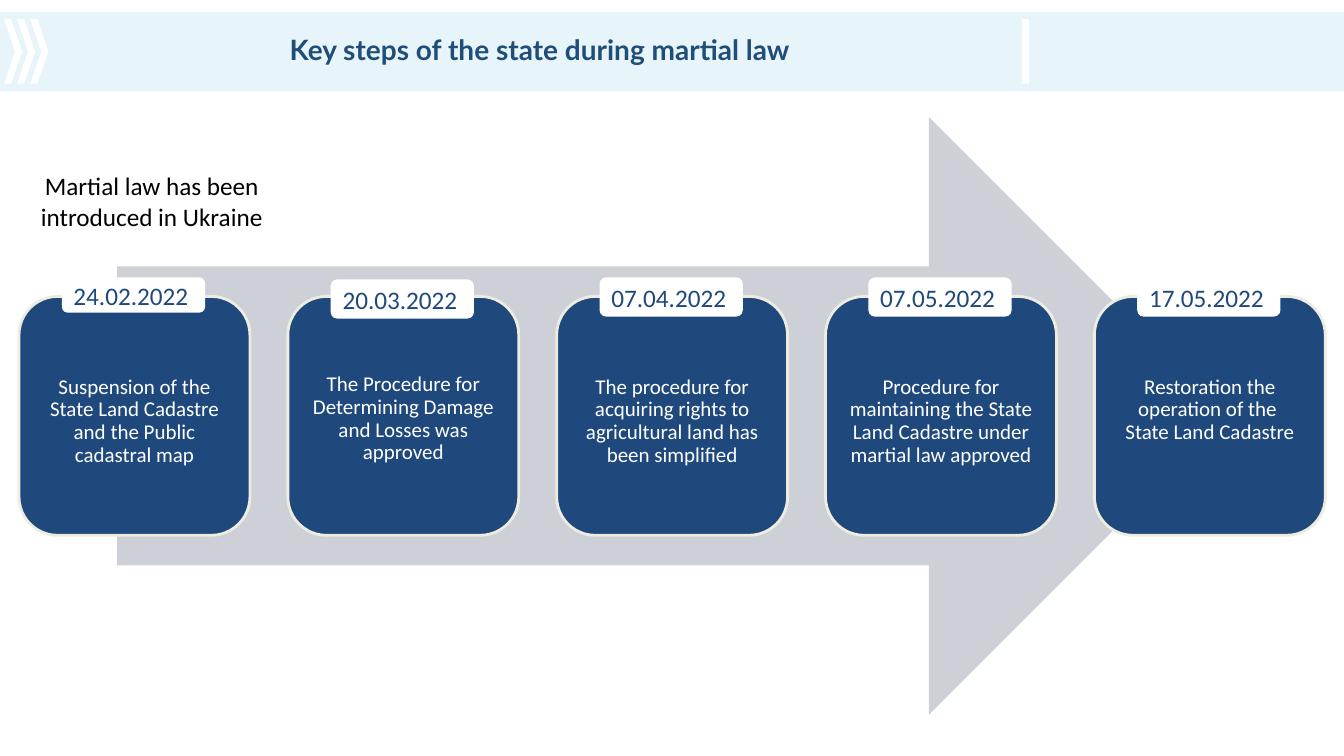
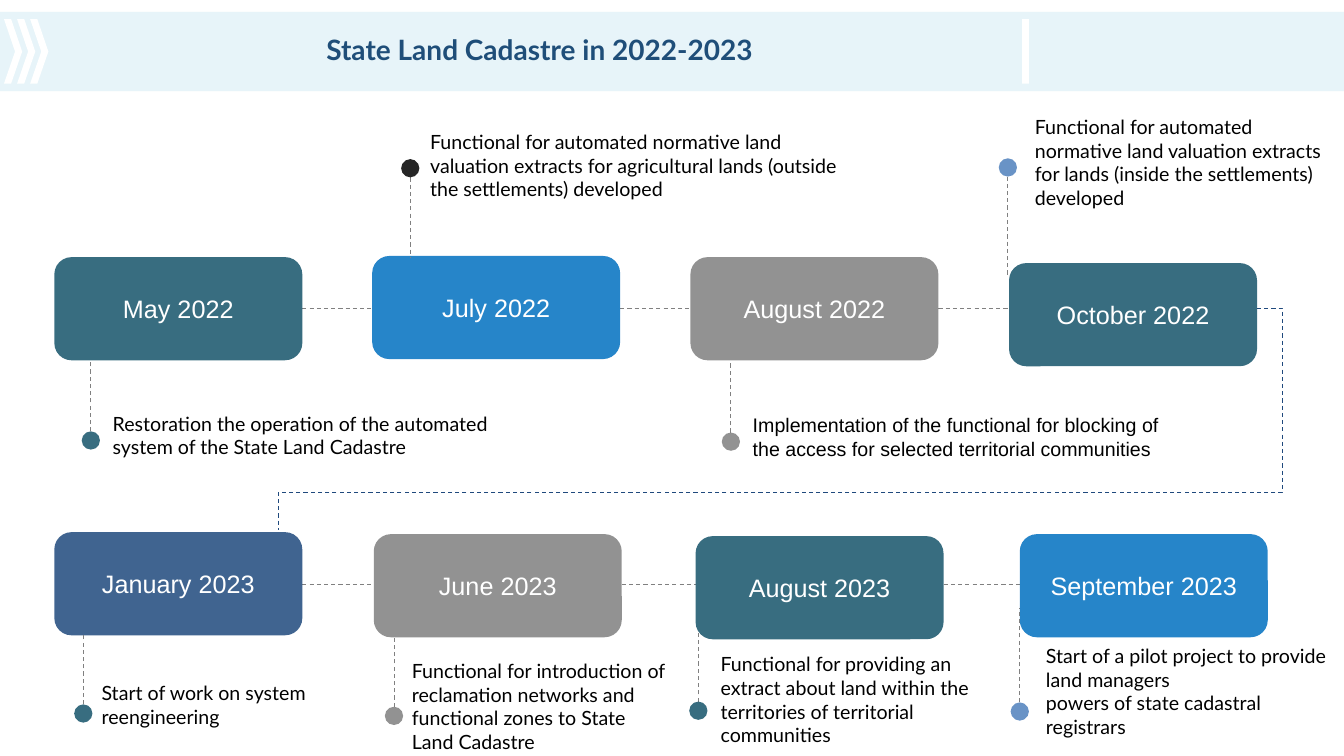
from lxml import etree
from pptx import Presentation
from pptx.dml.color import RGBColor
from pptx.enum import dml, shapes, text
from pptx.oxml.ns import qn
from pptx.util import Cm, Pt

HUES = {
    "band": "DCEFF7", "title": "1F4E79", "navy": "1F497D", "cream": "EEECE1",
    "arrow": "CDD0D7", "teal": "16546A", "blue": "0070C0", "gray": "808080",
    "sky": "4F81BD", "black": "000000", "white": "FFFFFF",
}
KIND = shapes.MSO_SHAPE
MID, TOP = text.MSO_ANCHOR.MIDDLE, text.MSO_ANCHOR.TOP
LEFT, CENTER = text.PP_ALIGN.LEFT, text.PP_ALIGN.CENTER

STEPS_TITLE = "Key steps of the state during martial law"
INTRO = "Martial law has been introduced in Ukraine"
STEPS = [
    ("24.02.2022", 6.99, 0.89, 1.72,
     "Suspension of the State Land Cadastre and the Public cadastral map"),
    ("20.03.2022", 7.04, 0.99, 1.66,
     "The Procedure for Determining Damage and Losses was approved"),
    ("07.04.2022", 6.99, 0.99, 1.72,
     "The procedure for acquiring rights to agricultural land has been simplified"),
    ("07.05.2022", 6.99, 0.99, 1.72,
     "Procedure for maintaining the State Land Cadastre under martial law approved"),
    ("17.05.2022", 6.99, 0.99, 1.72,
     "Restoration the operation of the \vState Land Cadastre"),
]

PLAN_TITLE = "State Land Cadastre in 2022-2023"
ROWS = [
    (7.77, [
        dict(date="May 2022", hue="teal", at=(1.37, 6.48), dot="teal",
             pin=(2.29, 10.87, 9.09), box=(2.59, 10.24, 10.52, 1.45), font="Lato",
             note="Restoration the operation of the automated system of the State Land Cadastre"),
        dict(date="July 2022", hue="blue", at=(9.38, 6.45), dot="black",
             pin=(10.34, 4.01, 6.48), box=(10.59, 3.15, 11.33, 2.06), font="Lato",
             note="Functional for automated normative land valuation extracts for "
                  "agricultural lands (outside the settlements) developed"),
        dict(date="August 2022", hue="gray", at=(17.4, 6.48), dot="gray",
             pin=(18.42, 10.9, 9.12), box=(18.72, 10.28, 10.78, 1.45), font="Arial",
             note="Implementation of the functional for blocking of the access for "
                  "selected territorial communities"),
        dict(date="October 2022", hue="teal", at=(25.43, 6.63), dot="sky",
             pin=(25.4, 3.99, 6.96), box=(25.83, 2.77, 8.03, 2.64), font="Lato",
             note="Functional for automated normative land valuation extracts for "
                  "lands (inside the settlements) developed"),
    ]),
    (14.73, [
        dict(date="January 2023", hue="navy", at=(1.37, 13.41), dot="teal",
             pin=(2.1, 17.75, 16), box=(2.31, 17.04, 6.96, 1.45), font="Lato",
             note="Start of work on system reengineering"),
        dict(date="June 2023", hue="gray", at=(9.42, 13.46), dot="gray",
             pin=(9.93, 17.81, 16.03), box=(10.13, 16.48, 6.96, 2.64), font="Lato",
             note="Functional for introduction of reclamation networks and "
                  "functional zones to State Land Cadastre"),
        dict(date="August 2023", hue="teal", at=(17.53, 13.51), dot="teal",
             pin=(17.6, 17.68, 15.9), box=(17.91, 16.31, 7.39, 2.64), font="Lato",
             note="Functional for providing an extract about land within the "
                  "territories of territorial communities"),
        dict(date="September 2023", hue="blue", at=(25.7, 13.46), dot="sky",
             pin=(25.7, 17.7, 15.32), box=(26.11, 16.1, 7.7, 2.64), font="Lato",
             note="Start of a pilot project to provide land managers\n"
                  "powers of state cadastral registrars"),
    ]),
]
CARD_W, CARD_H, DOT = 6.25, 2.6, 0.46


def rgb(hue):
    return RGBColor.from_string(HUES[hue])


def put(shape, words, size=18, font="Calibri", hue="black", bold=False,
        align=LEFT, anchor=TOP, inset=(0.25, 0.13, 0.25, 0.13), lead=None):
    frame = shape.text_frame
    frame.word_wrap = True
    frame.auto_size = text.MSO_AUTO_SIZE.NONE
    frame.vertical_anchor = anchor
    (frame.margin_left, frame.margin_top,
     frame.margin_right, frame.margin_bottom) = map(Cm, inset)
    frame.text = words
    for para in frame.paragraphs:
        para.alignment = align
        if lead:
            para.line_spacing = lead
        for run in para.runs:
            run.font.size, run.font.name, run.font.bold = Pt(size), font, bold
            run.font.color.rgb = rgb(hue)


def paint(shape, hue, alpha=100, edge=None):
    shape.shadow.inherit = False
    shape.fill.solid()
    shape.fill.fore_color.rgb = rgb(hue)
    if alpha < 100:
        for tint in shape.element.spPr.iter(qn("a:srgbClr")):
            etree.SubElement(tint, qn("a:alpha")).set("val", str(alpha * 1000))
    if edge:
        shape.line.color.rgb = rgb(edge)
        shape.line.width = Pt(2)
    else:
        shape.line.fill.background()
    return shape


def draw(slide, kind, box, hue, **style):
    return paint(slide.shapes.add_shape(kind, *map(Cm, box)), hue, **style)


def label(slide, box, words, **style):
    put(slide.shapes.add_textbox(*map(Cm, box)), words, **style)


def dash(slide, ends, hue="gray", kind=shapes.MSO_CONNECTOR.STRAIGHT):
    line = slide.shapes.add_connector(kind, *map(Cm, ends))
    line.line.color.rgb = rgb(hue)
    line.line.width = Pt(0.75)
    line.line.dash_style = dml.MSO_LINE.DASH
    etree.SubElement(line.element.spPr, qn("a:effectLst"))
    return line


def add_band(slide, layout):
    top, mid, low = 0.48, 1.3, 2.11
    band = draw(slide, KIND.RECTANGLE, (0, 0.3, 33.87, 2), "band", alpha=66)
    marks = [[(x + 0.46, mid), (x + 0.18, top), (x, top),
              (x + 0.28, mid), (x, low), (x + 0.18, low)]
             for x in (0.1, 0.43, 0.76)]
    marks.append([(25.93, top), (25.76, top), (25.76, low), (25.93, low)])
    pen = None
    for mark in marks:
        (x, y), *rest = [(Cm(a), Cm(b)) for a, b in mark]
        if pen is None:
            pen = slide.shapes.build_freeform(x, y)
        else:
            pen.move_to(x, y)
        pen.add_line_segments(rest, close=True)
    signs = paint(pen.convert_to_shape(), "white")
    for i, part in enumerate((band, signs)):
        part.element.xpath("./p:nvSpPr/p:cNvPr")[0].set("id", str(20 + i))
        layout.shapes.element.insert(2 + i, part.element)


def add_slide(deck, title):
    slide = deck.slides.add_slide(deck.slide_layouts[5])
    head = slide.shapes.title
    head.left, head.top, head.width, head.height = map(Cm, (1.37, 0.81, 24.46, 0.86))
    put(head, title, size=20, font="Lato", hue="title", bold=True,
        align=CENTER, anchor=MID, inset=(0, 0, 0, 0))
    return slide


def fill_steps(slide):
    draw(slide, KIND.RIGHT_ARROW, (2.95, 2.95, 27.99, 15.06), "arrow")
    for i, (date, top, high, drop, words) in enumerate(STEPS):
        left = 0.48 + 6.775 * i
        card = draw(slide, KIND.ROUNDED_RECTANGLE, (left, 7.47, 5.82, 6.02),
                    "navy", edge="cream")
        put(card, words, size=15, hue="white", align=CENTER,
            inset=(0.15, drop, 0.15, 0.15), lead=0.9)
        tab = draw(slide, KIND.ROUNDED_RECTANGLE,
                   (left + 1.08, top, 3.61, high), "white")
        put(tab, date, hue="navy", anchor=MID)
    label(slide, (0.69, 4.17, 6.27, 1.8), INTRO, align=CENTER)


def fill_plan(slide):
    for level, events in ROWS:
        for now, after in zip(events, events[1:]):
            dash(slide, (now["at"][0] + CARD_W, level, after["at"][0], level))
        for event in events:
            card = draw(slide, KIND.ROUNDED_RECTANGLE,
                        (*event["at"], CARD_W, CARD_H), event["hue"], alpha=85)
            put(card, event["date"], font="Arial", hue="white",
                align=CENTER, anchor=MID)
            x, y, end = event["pin"]
            dash(slide, (x, y if end < y else y + DOT, x, end))
            draw(slide, KIND.OVAL, (x - DOT / 2, y, DOT, DOT),
                 event["dot"], alpha=85)
            label(slide, event["box"], event["note"], size=14, font=event["font"])
    turn = dash(slide, (31.68, 7.77, 7.01, 13.36), "navy",
                shapes.MSO_CONNECTOR.ELBOW)
    form = turn.element.spPr.find(qn("a:prstGeom"))
    form.set("prst", "bentConnector4")
    bends = form.find(qn("a:avLst"))
    for name, share in (("adj1", -2600), ("adj2", 83000)):
        bend = etree.SubElement(bends, qn("a:gd"))
        bend.set("name", name)
        bend.set("fmla", f"val {share}")


def main():
    deck = Presentation()
    deck.slide_width, deck.slide_height = Cm(33.87), Cm(19.05)
    steps = add_slide(deck, STEPS_TITLE)
    add_band(steps, deck.slide_layouts[5])
    fill_steps(steps)
    fill_plan(add_slide(deck, PLAN_TITLE))
    deck.save("out.pptx")


if __name__ == "__main__":
    main()
